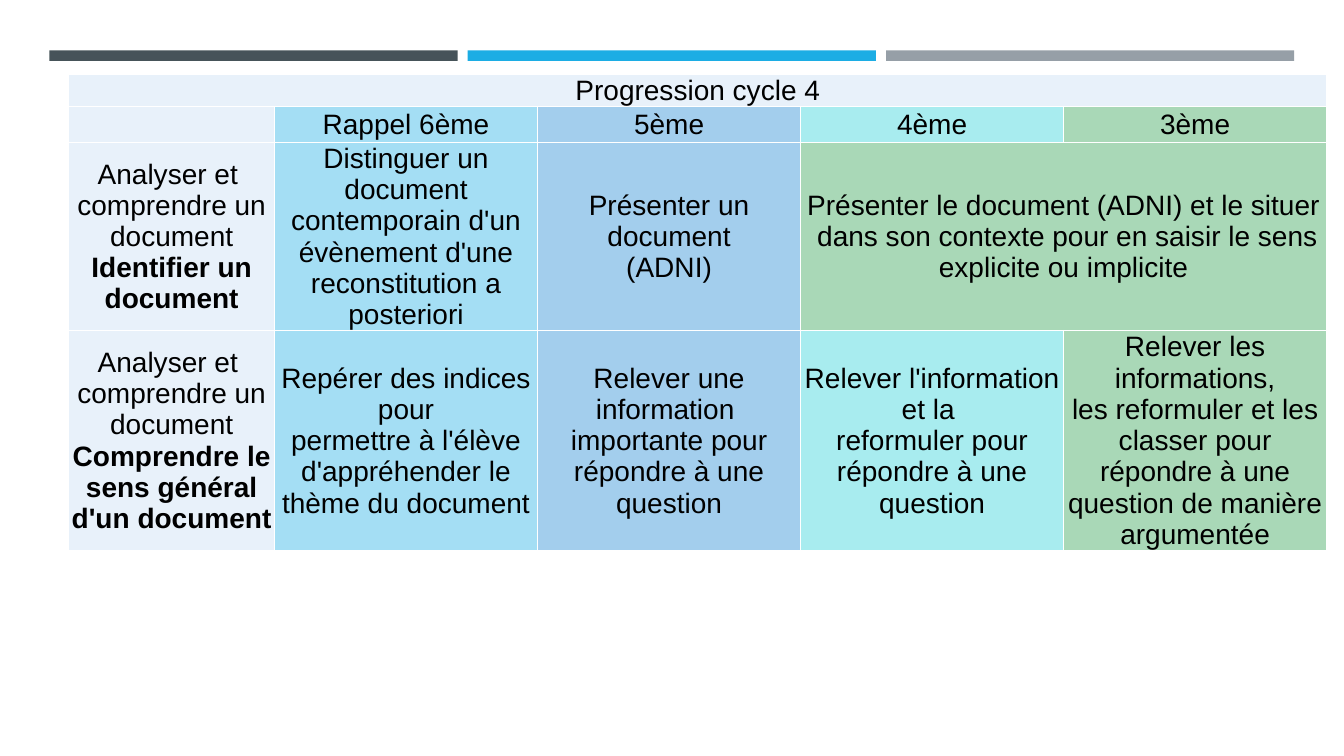
from lxml import etree
from pptx import Presentation
from pptx.dml.color import RGBColor
from pptx.enum.shapes import MSO_SHAPE
from pptx.enum.text import MSO_ANCHOR, PP_ALIGN
from pptx.oxml.ns import qn
from pptx.util import Pt

RECT = MSO_SHAPE.RECTANGLE
MIDDLE = MSO_ANCHOR.MIDDLE
CENTER = PP_ALIGN.CENTER

COLORS = {
    "text": "000000", "border": "FFFFFF",
    "slate": "465359", "blue": "1CADE4", "gray": "969FA7",
    "pale": "E8F1FA", "sky": "A4DEF4", "azure": "A3CEED",
    "aqua": "A8ECEF", "green": "A9D8B7",
}
BARS = ["slate", "blue", "gray"]
SKILL = "Analyser et \ncomprendre un document\n"
ROWS = [
    [("Progression cycle 4", ""), "", "", "", ""],
    ["", "Rappel 6ème", "5ème", "4ème", "3ème"],
    [(SKILL, "Identifier un document"),
     "Distinguer un document\ncontemporain d'un évènement d'une reconstitution a posteriori",
     "Présenter un document\n(ADNI)",
     "Présenter le document (ADNI) et le situer\n dans son contexte pour en saisir le sens explicite ou implicite",
     ""],
    [(SKILL, "Comprendre le sens général d'un document"),
     "Repérer des indices pour\npermettre à l'élève d'appréhender le thème du document",
     "Relever une information \nimportante pour répondre à une question",
     "Relever l'information et la \nreformuler pour répondre à une question",
     "Relever les informations,\nles reformuler et les classer pour répondre à une question de manière argumentée"],
]
COLUMN_FILLS = ["pale", "sky", "azure", "aqua", "green"]
SPAN_FILLS = {(0, 0): "pale", (2, 3): "green"}
SPANS = [((0, 0), (0, 4)), ((2, 3), (2, 4))]
COL_WIDTHS = [146.9] + [187.9] * 4
ROW_HEIGHTS = [22.8, 22.8, 134, 156]
TABLE_LEFT, TABLE_TOP = 49.2, 53.3
BAR_LEFT, BAR_TOP, BAR_WIDTH, BAR_HEIGHT, BAR_STEP = 35.3, 36, 291.6, 7.5, 298.8


def rgb(name):
    return RGBColor.from_string(COLORS[name])


def add_text(p, text, size=20, bold=False, font="Arial", color="text"):
    for i, line in enumerate(text.split("\n")):
        if i:
            p.add_line_break()
        if line:
            r = p.add_run()
            r.text = line
            r.font.size = Pt(size)
            r.font.bold = bold
            r.font.name = font
            r.font.color.rgb = rgb(color)
    for br in p._p.findall(qn("a:br")):
        if br.find(qn("a:rPr")) is None:
            etree.SubElement(br, qn("a:rPr"), sz=str(size * 100))


def add_borders(cell):
    tc_pr = cell._tc.get_or_add_tcPr()
    for side in ("lnL", "lnR", "lnT", "lnB"):
        ln = etree.SubElement(tc_pr, qn("a:" + side), w=str(Pt(1)))
        fill = etree.SubElement(ln, qn("a:solidFill"))
        etree.SubElement(fill, qn("a:srgbClr"), val=COLORS["border"])


def fill_cell(cell, content, fill):
    add_borders(cell)
    cell.fill.solid()
    cell.fill.fore_color.rgb = rgb(fill)
    cell.vertical_anchor = MIDDLE
    cell.margin_left = cell.margin_right = cell.margin_top = Pt(0.7)
    cell.margin_bottom = Pt(0)
    p = cell.text_frame.paragraphs[0]
    p.alignment = CENTER
    plain, strong = content if isinstance(content, tuple) else (content, "")
    add_text(p, plain)
    add_text(p, strong, bold=True)
    etree.SubElement(p._p, qn("a:endParaRPr"), sz="2000")


def add_bars(s):
    for i, color in enumerate(BARS):
        sp = s.shapes.add_shape(RECT, Pt(BAR_LEFT + i * BAR_STEP), Pt(BAR_TOP),
                                Pt(BAR_WIDTH), Pt(BAR_HEIGHT))
        sp.shadow.inherit = False
        sp.fill.solid()
        sp.fill.fore_color.rgb = rgb(color)
        sp.line.fill.background()


def add_progression(s):
    table = s.shapes.add_table(len(ROWS), len(COL_WIDTHS), Pt(TABLE_LEFT), Pt(TABLE_TOP),
                               Pt(sum(COL_WIDTHS)), Pt(sum(ROW_HEIGHTS))).table
    table.first_row = False
    table.horz_banding = False
    for column, width in zip(table.columns, COL_WIDTHS):
        column.width = Pt(width)
    for row, height in zip(table.rows, ROW_HEIGHTS):
        row.height = Pt(height)
    for start, end in SPANS:
        table.cell(*start).merge(table.cell(*end))
    for i, row in enumerate(ROWS):
        for j, content in enumerate(row):
            fill_cell(table.cell(i, j), content, SPAN_FILLS.get((i, j), COLUMN_FILLS[j]))


def main():
    prs = Presentation()
    prs.slide_width, prs.slide_height = Pt(960), Pt(540)
    s = prs.slides.add_slide(prs.slide_layouts[6])
    add_bars(s)
    add_progression(s)
    prs.save("out.pptx")


if __name__ == "__main__":
    main()
